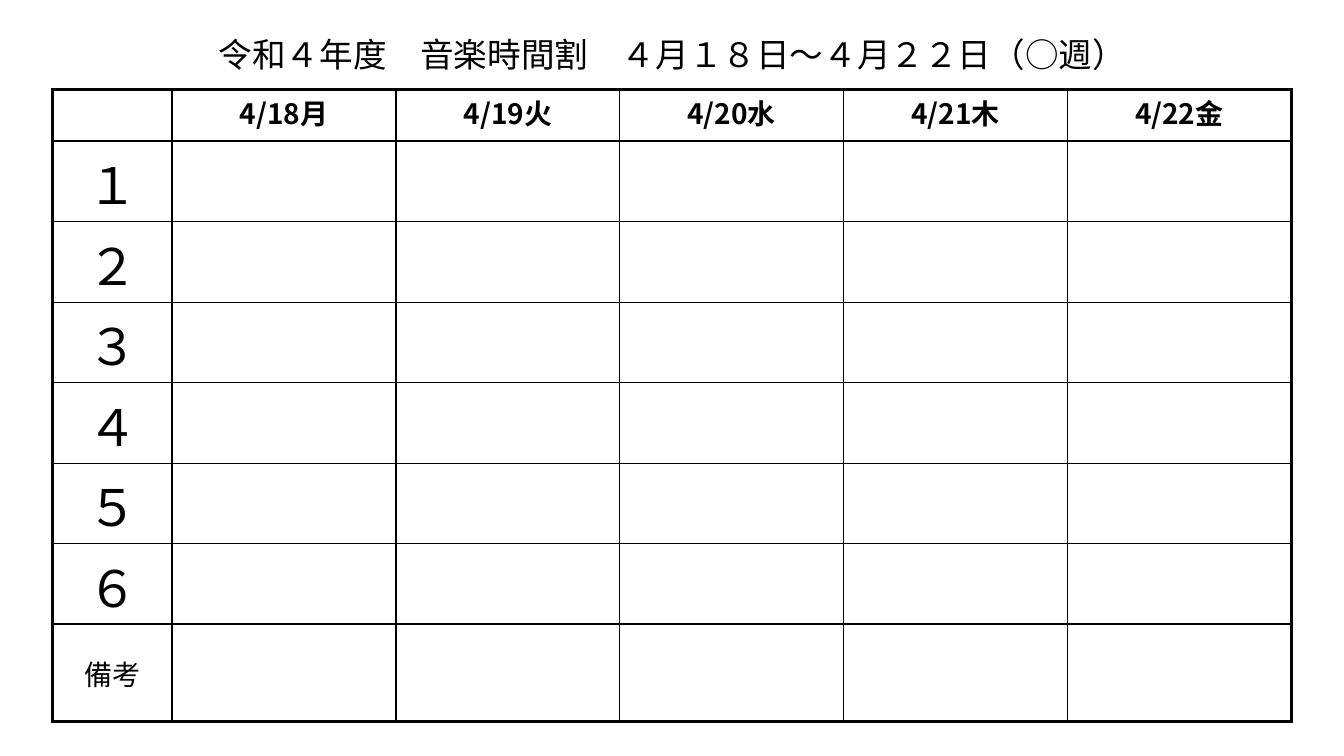
from lxml import etree
from pptx import Presentation
from pptx.dml.color import RGBColor
from pptx.enum.text import MSO_ANCHOR, PP_ALIGN
from pptx.oxml.ns import qn
from pptx.util import Cm, Pt

CENTER = PP_ALIGN.CENTER
MIDDLE = MSO_ANCHOR.MIDDLE
BOTTOM = MSO_ANCHOR.BOTTOM

TITLE = "令和４年度　音楽時間割　４月１８日〜４月２２日（○週）"
DAYS = ["4/18月", "4/19火", "4/20水", "4/21木", "4/22金"]
PERIODS = ["１", "２", "３", "４", "５", "６"]
REMARKS = "備考"

COLUMN_WIDTHS = [3.02] + [5.64] * len(DAYS)
ROW_HEIGHTS = [1.3] + [2.03] * len(PERIODS) + [2.44]

# Line widths in points, from the first outer edge to the last
OUTER, HEADING, INNER = 2.25, 1.5, 1
VERTICAL_LINES = [OUTER, HEADING] + [INNER] * 4 + [OUTER]
HORIZONTAL_LINES = [OUTER, HEADING] + [INNER] * 5 + [HEADING, OUTER]


def color(value):
    return RGBColor.from_string(value)


class TimetableSlide:
    font_name = "Noto Sans CJK JP"
    ink = "000000"

    def __init__(self, slide):
        self.slide = slide

    def label(self, text_frame, text, size, bold=False, spacing=None):
        text_frame.text = text
        paragraph = text_frame.paragraphs[0]
        paragraph.alignment = CENTER
        paragraph.line_spacing = spacing
        for run in paragraph.runs:
            font = run.font
            font.name = self.font_name
            font.size = Pt(size)
            font.bold = bold
            font.color.rgb = color(self.ink)
            east_asian = etree.SubElement(run._r.get_or_add_rPr(), qn("a:ea"))
            east_asian.set("typeface", self.font_name)

    def title(self, text, left, top, width, height):
        shape = self.slide.shapes.add_textbox(
            Cm(left), Cm(top), Cm(width), Cm(height))
        shape.text_frame.word_wrap = True
        shape.text_frame.vertical_anchor = BOTTOM
        self.label(shape.text_frame, text, 24, spacing=0.9)

    def border(self, cell, side, width):
        properties = cell._tc.get_or_add_tcPr()
        line = etree.SubElement(properties, qn("a:ln" + side), w=str(Pt(width)))
        fill = etree.SubElement(line, qn("a:solidFill"))
        etree.SubElement(fill, qn("a:srgbClr"), val=self.ink)

    def grid(self, left, top):
        table = self.slide.shapes.add_table(
            len(ROW_HEIGHTS), len(COLUMN_WIDTHS), Cm(left), Cm(top),
            Cm(sum(COLUMN_WIDTHS)), Cm(sum(ROW_HEIGHTS))).table
        table.first_row = False
        table.horz_banding = False
        for column, width in zip(table.columns, COLUMN_WIDTHS):
            column.width = Cm(width)
        for row, height in zip(table.rows, ROW_HEIGHTS):
            row.height = Cm(height)
        for i, row in enumerate(table.rows):
            for j, cell in enumerate(row.cells):
                self.border(cell, "L", VERTICAL_LINES[j])
                self.border(cell, "R", VERTICAL_LINES[j + 1])
                self.border(cell, "T", HORIZONTAL_LINES[i])
                self.border(cell, "B", HORIZONTAL_LINES[i + 1])
                cell.fill.background()
                cell.vertical_anchor = MIDDLE
        return table


def main():
    presentation = Presentation()
    presentation.slide_width = Cm(33.87)
    presentation.slide_height = Cm(19.05)
    slide = presentation.slides.add_slide(presentation.slide_layouts[6])
    timetable = TimetableSlide(slide)

    # Title
    timetable.title(TITLE, 0.51, 0.76, 32.87, 1.24)

    # Empty timetable
    table = timetable.grid(1.32, 2.26)

    # Day headings
    for j, day in enumerate(DAYS, start=1):
        timetable.label(table.cell(0, j).text_frame, day, 20,
                        bold=True, spacing=Pt(24))

    # Period numbers and remarks
    for i, period in enumerate(PERIODS, start=1):
        timetable.label(table.cell(i, 0).text_frame, period, 36)
    timetable.label(table.cell(len(PERIODS) + 1, 0).text_frame, REMARKS, 20)

    presentation.save("out.pptx")


if __name__ == "__main__":
    main()
